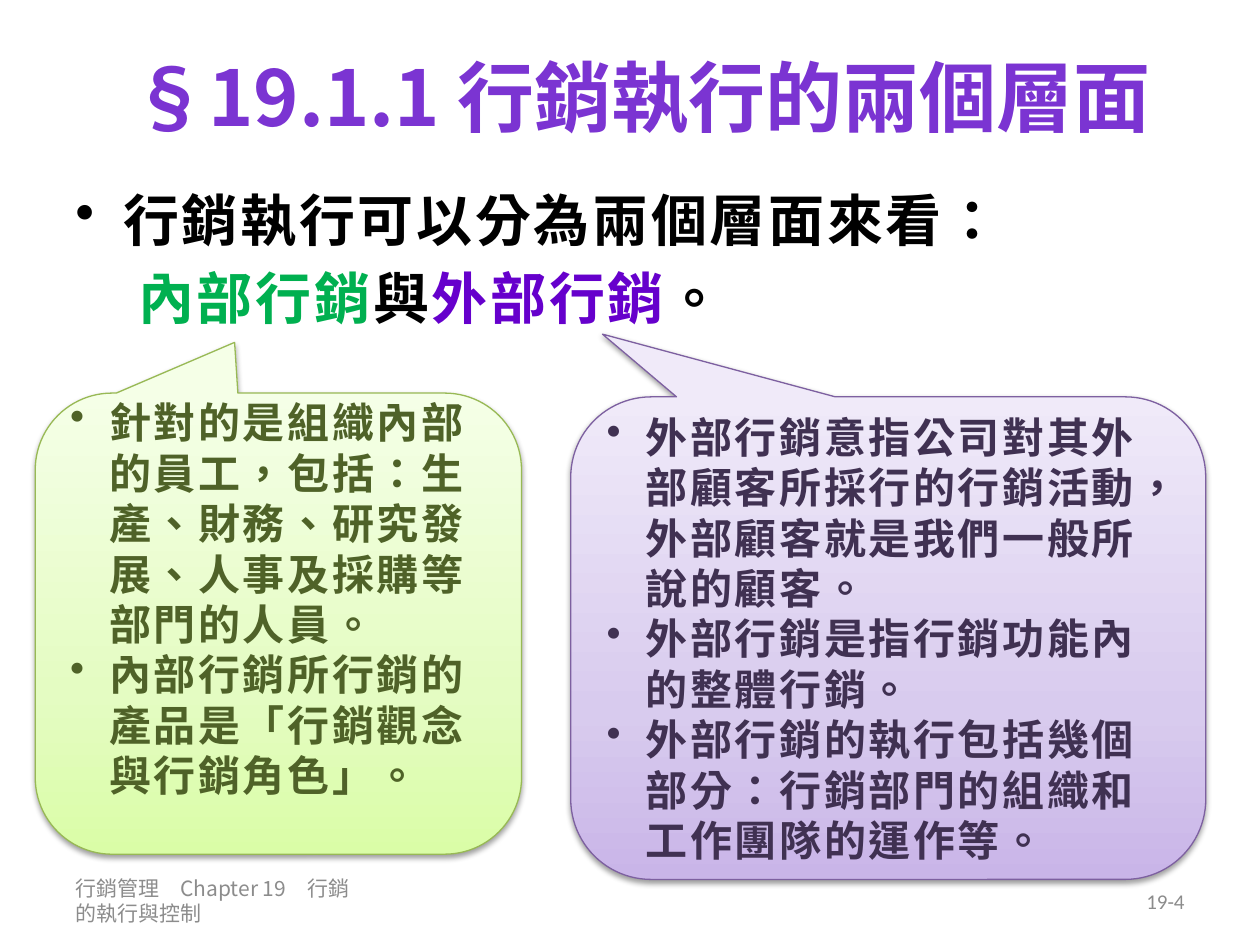
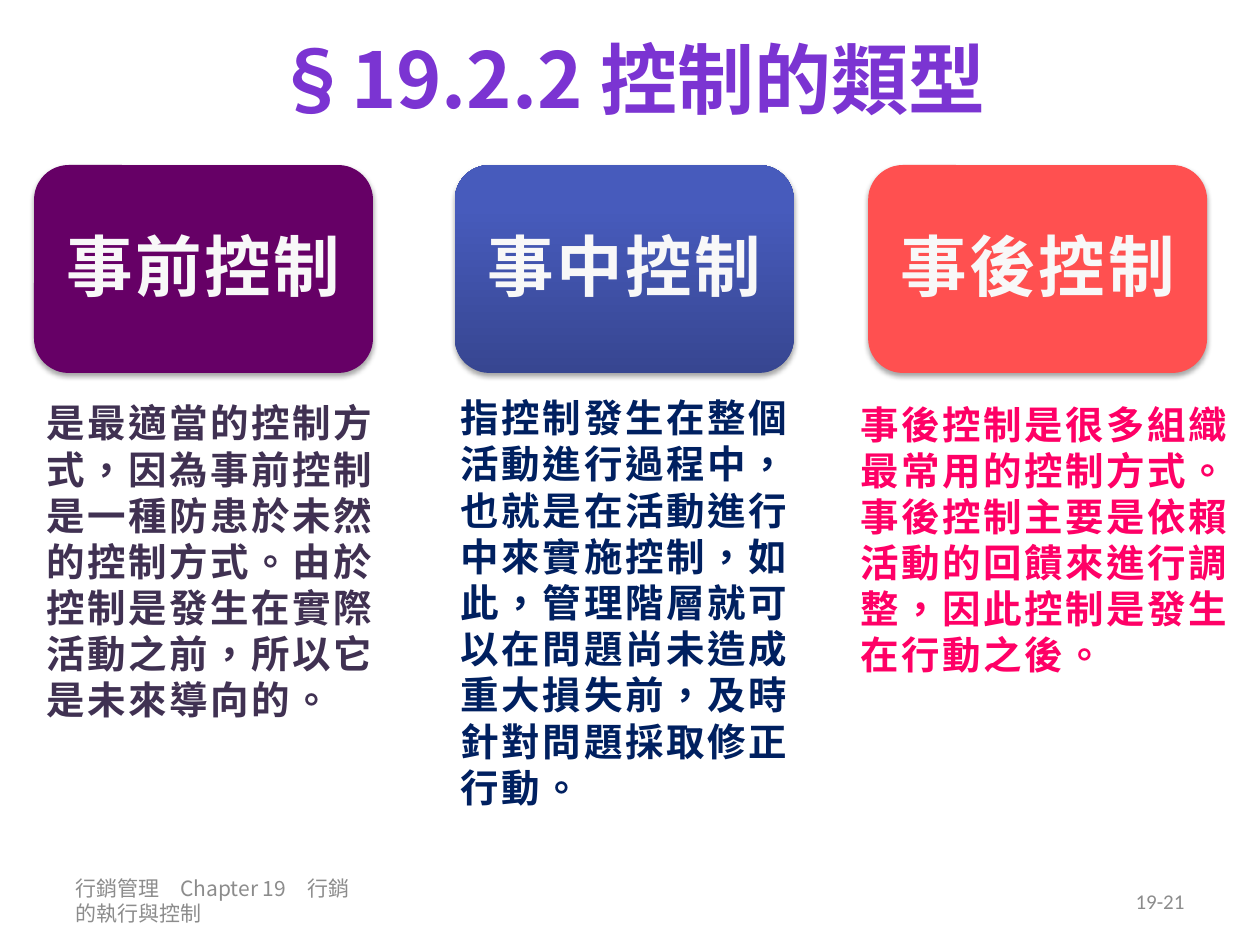
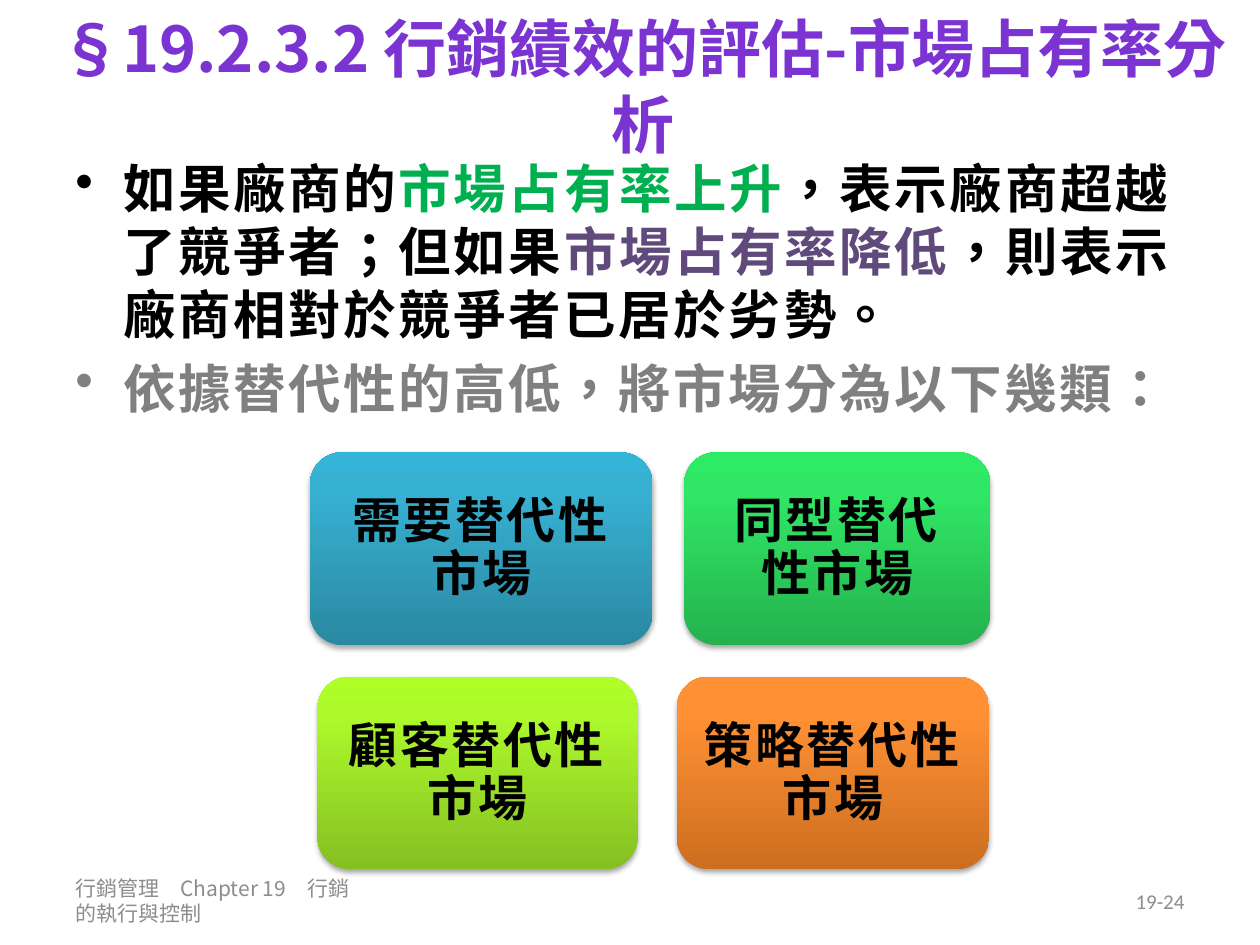
from lxml import etree
from pptx import Presentation
from pptx import util as u
from pptx.dml.color import RGBColor
from pptx.enum import shapes, text
from pptx.oxml import parse_xml
from pptx.oxml.ns import nsdecls, qn

CJK, LATIN = "Noto Sans CJK SC", "Calibri"
TITLE, FOOTER, BLACK, WHITE = "7B34D2", "8C8C8C", "000000", "F8F8F8"
GREEN, VIOLET, PLUM, INK, GREY = "00B050", "6600CC", "604A7B", "403152", "808080"
LEFT, CENTER, RIGHT = text.PP_ALIGN.LEFT, text.PP_ALIGN.CENTER, text.PP_ALIGN.RIGHT
MIDDLE, TOP = text.MSO_ANCHOR.MIDDLE, text.MSO_ANCHOR.TOP
TILE_STOPS, CALLOUT_STOPS = (0, 80, 100), (0, 35, 100)


def color(hex_string):
    """Turn a hex string into a colour."""
    return RGBColor.from_string(hex_string)


class Deck:
    """Hold the shared style and the slide being built."""

    def __init__(self):
        """Open an empty 10 by 7.5 inch presentation."""
        self.prs = Presentation()
        self.prs.slide_width, self.prs.slide_height = u.Inches(10), u.Inches(7.5)
        self.s = None

    def slide(self, title, box, number, size=44):
        """Start a slide with its title, footer and page number."""
        self.s = self.prs.slides.add_slide(self.prs.slide_layouts[5])
        sp = self.s.shapes.title
        sp.left, sp.top, sp.width, sp.height = map(u.Inches, box)
        self.fill_text(sp.text_frame, [[(title, TITLE)]], size, CJK, CENTER, MIDDLE)
        self.textbox((0.5, 6.95, 2.45, 0.4), [[("行銷管理　Chapter 19　行銷的執行與控制", FOOTER)]],
                     12, font=CJK, anchor=MIDDLE, bold=False, spacing=0)
        self.textbox((7.17, 6.95, 2.33, 0.4), [[(number, FOOTER)]],
                     12, align=RIGHT, anchor=MIDDLE, bold=False, spacing=0)

    def fill_text(self, tf, paragraphs, size, font=LATIN, align=LEFT, anchor=TOP,
                  bold=True, spacing=0, indents=(), before=0, line=1.2):
        """Fill a text frame, run by run; indents pair a margin with a bullet flag."""
        tf.word_wrap, tf.vertical_anchor = True, anchor
        for i, runs in enumerate(paragraphs):
            p = tf.add_paragraph() if i else tf.paragraphs[0]
            if indents:
                self.indent(p, *indents[i])
            p.alignment, p.line_spacing = align, u.Pt(size * line)
            p.space_before = u.Pt(before if i else 0)
            for words, hex_string in runs:
                r = p.add_run()
                r.text = words
                r.font.size, r.font.bold, r.font.name = u.Pt(size), bold, font
                r.font.color.rgb = color(hex_string)
                rPr = r._r.get_or_add_rPr()
                rPr.set("lang", "zh-TW")
                rPr.set("spc", str(int(spacing * 100)))
                ea = etree.Element(qn("a:ea"), typeface=font)
                rPr.find(qn("a:latin")).addnext(ea)

    def indent(self, p, margin, bullet):
        """Indent a paragraph, hanging a bullet if asked."""
        pPr = p._p.get_or_add_pPr()
        pPr.set("marL", str(u.Inches(margin)))
        pPr.set("indent", str(-u.Inches(margin) if bullet else 0))
        if bullet:
            etree.SubElement(pPr, qn("a:buChar"), char="•")

    def textbox(self, box, paragraphs, size, spacing=1.5, **style):
        """Add a wrapped text box."""
        sp = self.s.shapes.add_textbox(*map(u.Inches, box))
        self.fill_text(sp.text_frame, paragraphs, size, spacing=spacing, **style)

    def shape(self, kind, box, colors, stops, alpha, distance):
        """Add a shape with a solid or upward gradient fill and a soft shadow."""
        sp = self.s.shapes.add_shape(kind, *map(u.Inches, box))
        sp.line.fill.background()
        if len(colors) == 1:
            sp.fill.solid()
            sp.fill.fore_color.rgb = color(colors[0])
        else:
            sp.fill.gradient()
            sp.fill.gradient_angle = 90
            gs_list = sp._element.spPr.find(qn("a:gradFill")).find(qn("a:gsLst"))
            for gs in list(gs_list):
                gs_list.remove(gs)
            for stop, hex_string in zip(stops, colors):
                gs = etree.SubElement(gs_list, qn("a:gs"), pos=str(stop * 1000))
                etree.SubElement(gs, qn("a:srgbClr"), val=hex_string)
        sp._element.spPr.append(parse_xml(
            f'<a:effectLst {nsdecls("a")}><a:outerShdw blurRad="{u.Pt(3.1)}" '
            f'dist="{u.Pt(distance)}" dir="5400000" rotWithShape="0"><a:srgbClr val="{BLACK}">'
            f'<a:alpha val="{alpha * 1000}"/></a:srgbClr></a:outerShdw></a:effectLst>'))
        return sp

    def tile(self, box, label, colors, size, ink, font, inset):
        """Add a rounded tile with a centred label."""
        sp = self.shape(shapes.MSO_SHAPE.ROUNDED_RECTANGLE, box, colors, TILE_STOPS, 35, 1.8)
        tf = sp.text_frame
        tf.margin_left = tf.margin_right = tf.margin_top = tf.margin_bottom = u.Inches(inset)
        self.fill_text(tf, [[(label, ink)]], size, font, CENTER, MIDDLE, spacing=1.5, line=1.08)

    def callout(self, box, pointer, colors, outline, ink, points, bottom=0.05):
        """Add a speech callout holding bullet points."""
        sp = self.shape(shapes.MSO_SHAPE.ROUNDED_RECTANGULAR_CALLOUT, box, colors,
                        CALLOUT_STOPS, 38, 1.6)
        sp.adjustments[0], sp.adjustments[1] = pointer
        sp.line.color.rgb, sp.line.width = color(outline), u.Pt(0.75)
        sp.text_frame.margin_bottom = u.Inches(bottom)
        self.fill_text(sp.text_frame, [[(point, ink)] for point in points], 24, anchor=MIDDLE,
                       spacing=1.5, indents=[(0.31, True)] * len(points))


def two_sides(deck):
    """Build the slide on internal and external marketing."""
    deck.slide("§19.1.1 行銷執行的兩個層面", (0.59, 0.13, 9, 1.26), "19-4")
    deck.textbox((0.5, 1.42, 9, 1.86), [
        [("行銷執行可以分為兩個層面來看：", BLACK)],
        [("內部行銷", GREEN), ("與", BLACK), ("外部行銷", VIOLET), ("。", BLACK)],
    ], 32, indents=[(0.38, True), (0.5, False)], before=6.4)
    deck.callout((0.28, 3.12, 3.86, 3.66), (-0.09, -0.61), ("DAFDA7", "E4FCC2", "F5FFE7"),
                 "98B955", "4F6228", [
        "針對的是組織內部的員工，包括：生產、財務、研究發展、人事及採購等部門的人員。",
        "內部行銷所行銷的產品是「行銷觀念與行銷角色」。"], bottom=0.45)
    deck.callout((4.53, 3.15, 5.04, 3.83), (-0.45, -0.63), ("C9B5E8", "D8CBEE", "F0EAF9"),
                 "7D60A0", INK, [
        "外部行銷意指公司對其外部顧客所採行的行銷活動，外部顧客就是我們一般所說的顧客。",
        "外部行銷是指行銷功能內的整體行銷。",
        "外部行銷的執行包括幾個部分：行銷部門的組織和工作團隊的運作等。"])


def control_types(deck):
    """Build the slide on the three types of control."""
    deck.slide("§19.2.2 控制的類型", (0.5, 0, 9, 1.23), "19-21")
    controls = [
        (0.27, "事前控制", ("660066",), (0.27, 3.12, 2.91, 2.69), INK,
         "是最適當的控制方式，因為事前控制是一種防患於未然的控制方式。"
         "由於控制是發生在實際活動之前，所以它是未來導向的。"),
        (3.61, "事中控制", ("374691", "475BBC", "455ABF"), (3.56, 3.08, 2.85, 3.43), "002060",
         "指控制發生在整個活動進行過程中，也就是在活動進行中來實施控制，"
         "如此，管理階層就可以在問題尚未造成重大損失前，及時針對問題採取修正行動。"),
        (6.89, "事後控制", ("FF5050",), (6.73, 3.13, 3.15, 2.32), "FF0066",
         "事後控制是很多組織最常用的控制方式。"
         "事後控制主要是依賴活動的回饋來進行調整，因此控制是發生在行動之後。"),
    ]
    for left, label, colors, box, ink, description in controls:
        deck.tile((left, 1.31, 2.69, 1.65), label, colors, 38, WHITE, CJK, 0.16)
        deck.textbox(box, [[(description, ink)]], 22)


def market_share(deck):
    """Build the slide on market share analysis."""
    deck.slide("§19.2.3.2 行銷績效的評估-市場占有率分析", (0.2, 0.05, 9.8, 1.25), "19-24", 36)
    deck.textbox((0.5, 1.19, 9, 2.72), [
        [("如果廠商的", BLACK), ("市場占有率上升", GREEN),
         ("，表示廠商超越了競爭者；但如果", BLACK), ("市場占有率降低", PLUM),
         ("，則表示廠商相對於競爭者已居於劣勢。", BLACK)],
        [("依據替代性的高低，將市場分為以下幾類：", GREY)],
    ], 30, indents=[(0.38, True)] * 2, before=6)
    markets = [
        (2.46, 3.59, 2.72, "需要替代性市場", ("2A88A2", "37B1D2", "34B4D6")),
        (5.43, 3.59, 2.43, "同型替代性市場", ("25B24E", "30E765", "2DEB64")),
        (2.52, 5.37, 2.54, "顧客替代性市場", ("85C022", "ADF92C", "AFFE28")),
        (5.37, 5.37, 2.48, "策略替代性市場", ("CC6E20", "FF9034", "FF9136")),
    ]
    for left, top, width, label, colors in markets:
        deck.tile((left, top, width, 1.53), label, colors, 28, BLACK, LATIN, 0.12)


def main():
    """Build the three slides and save them."""
    deck = Deck()
    for build in (two_sides, control_types, market_share):
        build(deck)
    deck.prs.save("out.pptx")


if __name__ == "__main__":
    main()
